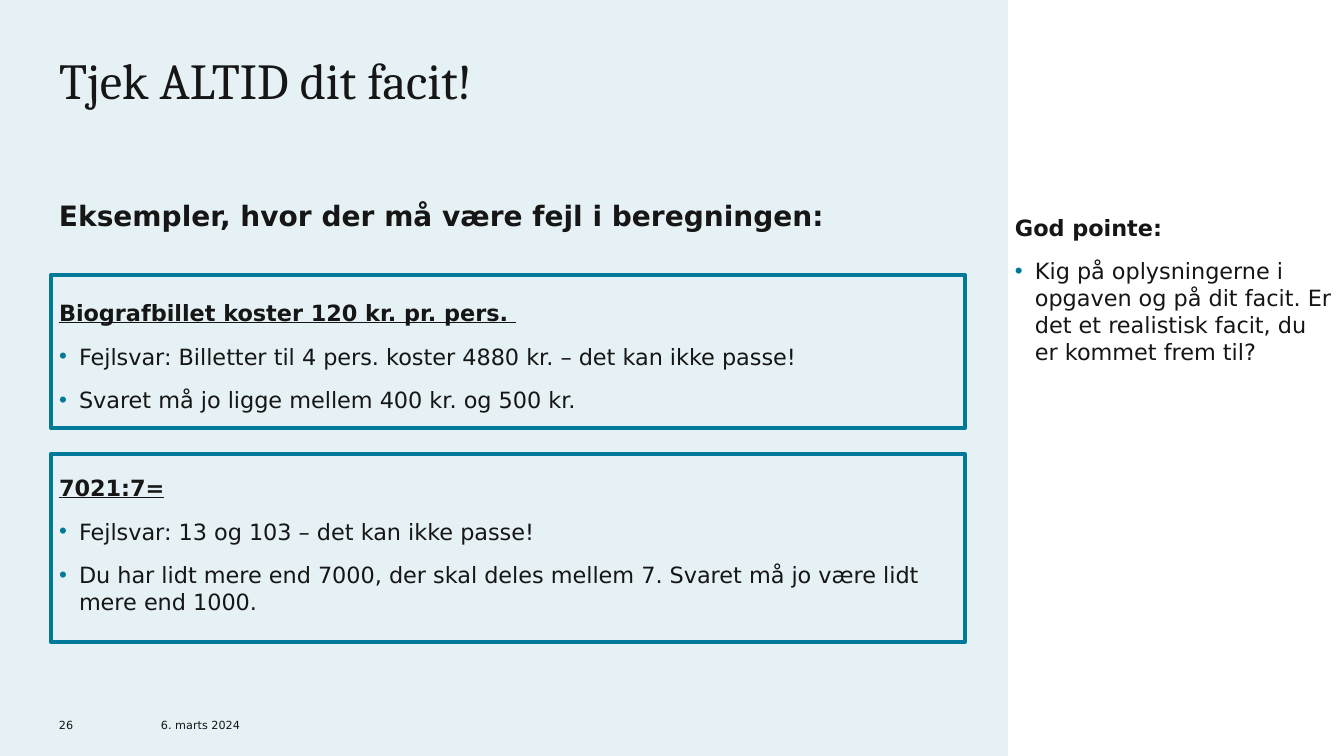
import pptx
import pptx.dml.color
import pptx.enum.shapes
import pptx.enum.text
import pptx.oxml
import pptx.oxml.ns
import pptx.util

RGBColor = pptx.dml.color.RGBColor
PALE_BLUE = RGBColor(0xE5, 0xF1, 0xF4)
WHITE = RGBColor(0xFF, 0xFF, 0xFF)
INK = RGBColor(0x16, 0x16, 0x16)
TEAL = RGBColor(0x00, 0x7A, 0x98)

EMU_PER_PX = 914400 / 100.8
SLIDE_SIZE = (1344, 756)
PANEL_BOX = (1008, 0, 336, 756)
BULLET_INDENT = 20

BODY = {"name": "DejaVu Sans", "size": pptx.util.Pt(16)}
BOLD = {**BODY, "bold": True}
UNDERLINED = {**BOLD, "underline": True}
SMALL = {**BODY, "size": pptx.util.Pt(8)}
LARGE = {**BOLD, "size": pptx.util.Pt(20)}
TITLE = {"name": "Cambria", "size": pptx.util.Pt(36)}

TOP = pptx.enum.text.MSO_ANCHOR.TOP
BOTTOM = pptx.enum.text.MSO_ANCHOR.BOTTOM

TITLE_TEXT = "Tjek ALTID dit facit!"
TITLE_BOX = (59, 59, 918, 103)

# box, anchor, heading, heading format, bullets
TEXTS = [
    ((59, 199, 918, 36), TOP, "Eksempler, hvor der må være fejl i beregningen:", LARGE, []),
    ((1015, 214, 319, 160), TOP, "God pointe:", BOLD, [
        "Kig på oplysningerne i opgaven og på dit facit. Er det et realistisk facit, "
        "du er kommet frem til?",
    ]),
    ((161, 712, 140, 20), BOTTOM, "6. marts 2024", SMALL, []),
    ((59, 712, 30, 20), BOTTOM, "26", SMALL, []),
]

# box, text insets (left, top), heading, bullets
FRAMES = [
    ((51, 275, 914, 153), (8, 24), "Biografbillet koster 120 kr. pr. pers. ", [
        "Fejlsvar: Billetter til 4 pers. koster 4880 kr. – det kan ikke passe!",
        "Svaret må jo ligge mellem 400 kr. og 500 kr.",
    ]),
    ((51, 454, 914, 188), (8, 20), "7021:7=", [
        "Fejlsvar: 13 og 103 – det kan ikke passe!",
        "Du har lidt mere end 7000, der skal deles mellem 7. "
        "Svaret må jo være lidt mere end 1000.",
    ]),
]


def emu(*lengths):
    return [round(length * EMU_PER_PX) for length in lengths]


def add_bullet(paragraph):
    properties = paragraph._p.get_or_add_pPr()
    indent = emu(BULLET_INDENT)[0]
    properties.set("marL", str(indent))
    properties.set("indent", str(-indent))
    namespace = pptx.oxml.ns.nsdecls("a")
    for element in (
        f'<a:buClr {namespace}><a:srgbClr val="{TEAL}"/></a:buClr>',
        f'<a:buFont {namespace} typeface="Arial"/>',
        f'<a:buChar {namespace} char="•"/>',
    ):
        properties.append(pptx.oxml.parse_xml(element))


def fill_text(shape, heading, heading_format, bullets=(), anchor=TOP, insets=(0, 0)):
    frame = shape.text_frame
    frame.word_wrap = True
    frame.auto_size = pptx.enum.text.MSO_AUTO_SIZE.NONE
    frame.vertical_anchor = anchor
    frame.margin_left, frame.margin_top = emu(*insets)
    frame.margin_right = frame.margin_bottom = 0
    lines = [(heading, heading_format)] + [(bullet, BODY) for bullet in bullets]
    for index, (text, font_format) in enumerate(lines):
        paragraph = frame.add_paragraph() if index else frame.paragraphs[0]
        paragraph.text = text
        paragraph.alignment = pptx.enum.text.PP_ALIGN.LEFT
        if index:
            paragraph.space_before = pptx.util.Pt(12)
            add_bullet(paragraph)
        for name, value in font_format.items():
            setattr(paragraph.font, name, value)
        paragraph.font.color.rgb = INK


def add_rectangle(slide, box):
    rectangle = slide.shapes.add_shape(pptx.enum.shapes.MSO_SHAPE.RECTANGLE, *emu(*box))
    rectangle.shadow.inherit = False
    return rectangle


def main():
    presentation = pptx.Presentation()
    presentation.slide_width, presentation.slide_height = emu(*SLIDE_SIZE)
    slide = presentation.slides.add_slide(presentation.slide_layouts[5])
    slide.background.fill.solid()
    slide.background.fill.fore_color.rgb = PALE_BLUE

    title = slide.shapes.title
    title.left, title.top, title.width, title.height = emu(*TITLE_BOX)
    fill_text(title, TITLE_TEXT, TITLE)
    title.text_frame.paragraphs[0].line_spacing = 0.83

    panel = add_rectangle(slide, PANEL_BOX)
    panel.fill.solid()
    panel.fill.fore_color.rgb = WHITE
    panel.line.fill.background()

    for box, anchor, heading, heading_format, bullets in TEXTS:
        text_box = slide.shapes.add_textbox(*emu(*box))
        fill_text(text_box, heading, heading_format, bullets, anchor)

    for box, insets, heading, bullets in FRAMES:
        frame = add_rectangle(slide, box)
        frame.fill.background()
        frame.line.color.rgb = TEAL
        frame.line.width = pptx.util.Pt(3)
        fill_text(frame, heading, UNDERLINED, bullets, insets=insets)

    presentation.save("out.pptx")


if __name__ == "__main__":
    main()
